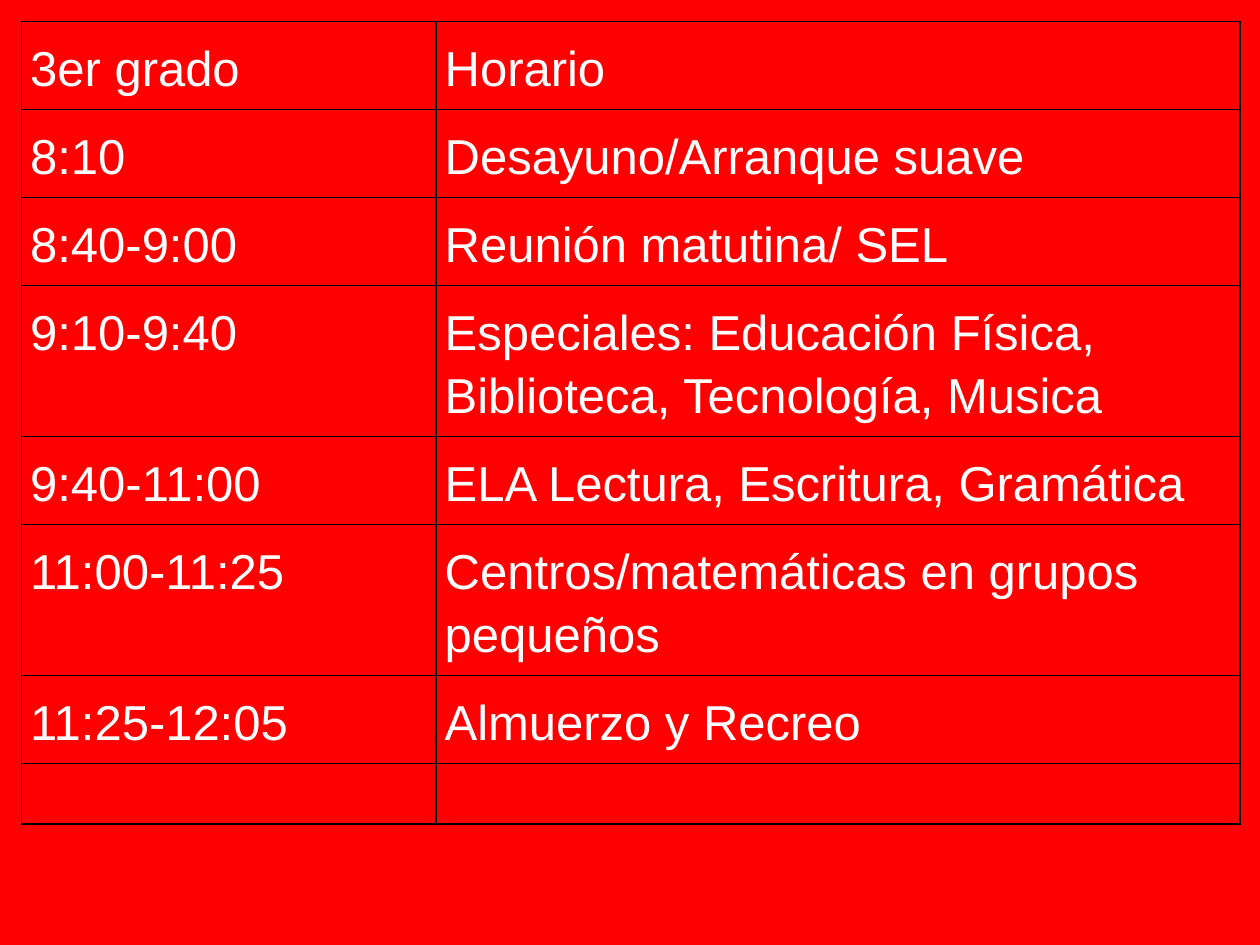
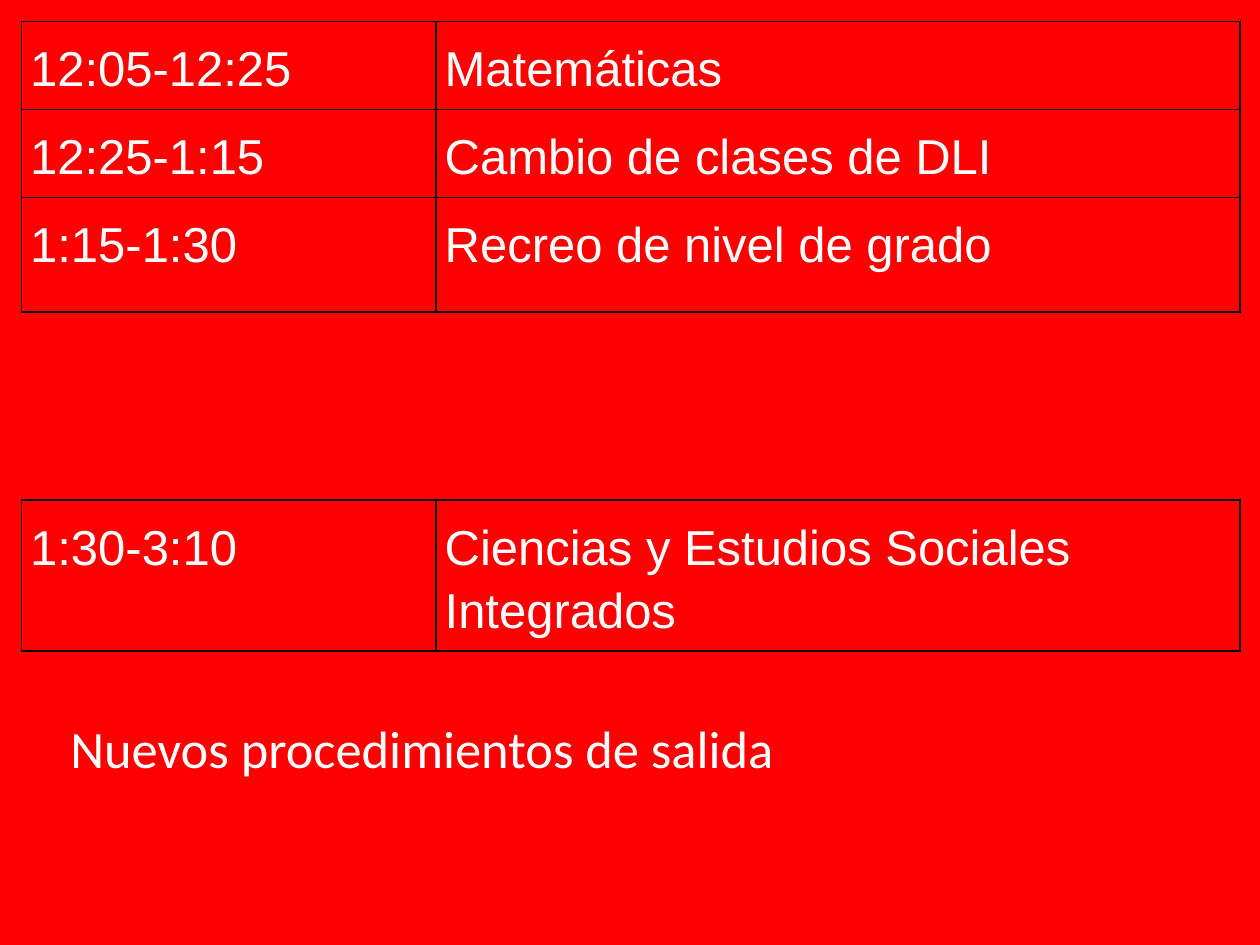
"""Build the third-grade daily schedule: two red slides with ruled timetables."""
from dataclasses import dataclass

from lxml import etree
from pptx import Presentation
from pptx.dml.color import RGBColor
from pptx.oxml.ns import qn
from pptx.util import Inches, Pt

MORNING = [
    ("3er grado", "Horario"),
    ("8:10", "Desayuno/Arranque suave"),
    ("8:40-9:00", "Reunión matutina/ SEL"),
    ("9:10-9:40", "Especiales: Educación Física, Biblioteca, Tecnología, Musica"),
    ("9:40-11:00", "ELA Lectura, Escritura, Gramática"),
    ("11:00-11:25", "Centros/matemáticas en grupos pequeños"),
    ("11:25-12:05", "Almuerzo y Recreo"),
    ("", ""),
]
MIDDAY = [
    ("12:05-12:25", "Matemáticas"),
    ("12:25-1:15", "Cambio de clases de DLI"),
    ("1:15-1:30", "Recreo de nivel de grado"),
]
AFTERNOON = [("1:30-3:10", "Ciencias y Estudios Sociales Integrados")]
DISMISSAL = "Nuevos procedimientos de salida"

SLIDES = [
    {"tables": [(0.17, MORNING, 0.48)]},
    {"tables": [(0.17, MIDDAY, 0.91), (3.97, AFTERNOON, 0.46)], "note": DISMISSAL},
]


@dataclass(frozen=True)
class Theme:
    """Colours, fonts, sizes and table measures shared by the slides."""

    background: str = "FF0000"
    text: str = "FFFFFF"
    border: str = "000000"
    table_font: str = "Arial"
    note_font: str = "Calibri"
    table_size: int = 28
    note_size: int = 30
    border_width: int = 1
    line_spacing: float = 1.15
    left: float = 0.17
    columns: tuple = (3.29, 6.38)
    row_height: float = 0.46
    side_margin: float = 0.07
    end_margin: float = 0.1


THEME = Theme()


def format_text(frame, font_name, size):
    """Apply the font, size and text colour to every span of a frame."""
    for para in frame.paragraphs:
        for span in para.runs:
            span.font.name = font_name
            span.font.size = Pt(size)
            span.font.color.rgb = RGBColor.from_string(THEME.text)


def add_borders(cell):
    """Rule all four sides of a cell."""
    properties = cell._tc.get_or_add_tcPr()
    for side in ("a:lnL", "a:lnR", "a:lnT", "a:lnB"):
        line = etree.SubElement(properties, qn(side), w=str(Pt(THEME.border_width)))
        fill = etree.SubElement(line, qn("a:solidFill"))
        etree.SubElement(fill, qn("a:srgbClr"), val=THEME.border)


def fill_cell(cell, text):
    """Rule a cell and write its text; an empty cell keeps default margins."""
    add_borders(cell)
    cell.fill.background()
    if not text:
        return
    cell.margin_left = cell.margin_right = Inches(THEME.side_margin)
    cell.margin_top = cell.margin_bottom = Inches(THEME.end_margin)
    cell.text_frame.text = text
    cell.text_frame.paragraphs[0].line_spacing = THEME.line_spacing
    format_text(cell.text_frame, THEME.table_font, THEME.table_size)


def add_timetable(page, top, entries, last_height):
    """Add a table of times and activities with its own last row height."""
    heights = [THEME.row_height] * (len(entries) - 1) + [last_height]
    table = page.shapes.add_table(
        len(entries), len(THEME.columns), Inches(THEME.left), Inches(top),
        Inches(sum(THEME.columns)), Inches(sum(heights)),
    ).table
    table.first_row = table.horz_banding = False
    for column, width in zip(table.columns, THEME.columns):
        column.width = Inches(width)
    for row, height, entry in zip(table.rows, heights, entries):
        row.height = Inches(height)
        for cell, text in zip(row.cells, entry):
            fill_cell(cell, text)


def add_note(page, text):
    """Add the closing line below the tables."""
    box = page.shapes.add_textbox(Inches(0.46), Inches(5.58), Inches(8.74), Inches(0.71))
    frame = box.text_frame
    frame.word_wrap = True
    frame.margin_left = frame.margin_right = Inches(0.1)
    frame.margin_top = frame.margin_bottom = Inches(0.1)
    frame.text = text
    format_text(frame, THEME.note_font, THEME.note_size)


def main():
    """Build and save the deck."""
    deck = Presentation()
    deck.slide_width, deck.slide_height = Inches(10), Inches(7.5)
    blank_layout = deck.slide_layouts[6]
    for content in SLIDES:
        page = deck.slides.add_slide(blank_layout)
        page.background.fill.solid()
        page.background.fill.fore_color.rgb = RGBColor.from_string(THEME.background)
        for top, entries, last_height in content["tables"]:
            add_timetable(page, top, entries, last_height)
        if "note" in content:
            add_note(page, content["note"])
    deck.save("out.pptx")


if __name__ == "__main__":
    main()
